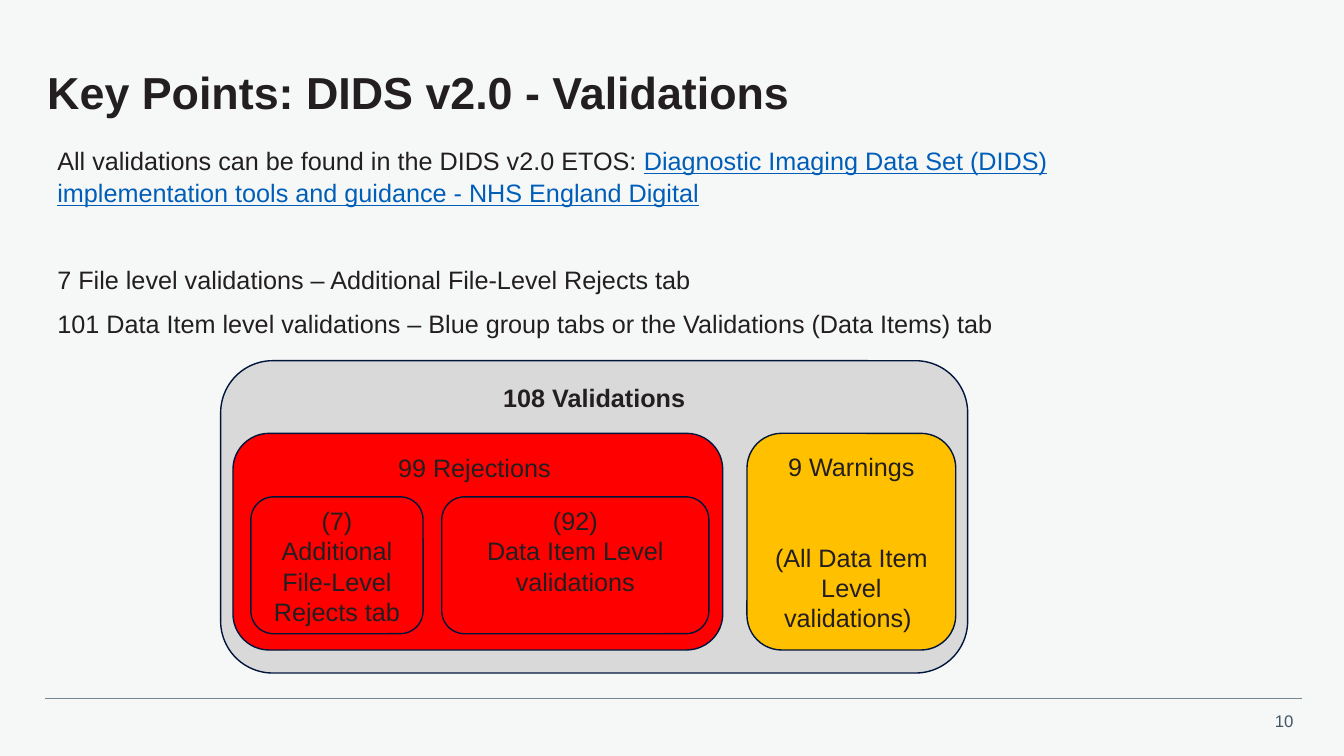
from lxml import etree
from pptx import Presentation
from pptx.dml.color import RGBColor
from pptx.enum.shapes import MSO_CONNECTOR, MSO_SHAPE
from pptx.enum.text import MSO_ANCHOR, MSO_AUTO_SIZE, PP_ALIGN
from pptx.oxml.ns import qn
from pptx.util import Cm, Pt

LEFT, CENTER, RIGHT = PP_ALIGN.LEFT, PP_ALIGN.CENTER, PP_ALIGN.RIGHT
TOP, MIDDLE = MSO_ANCHOR.TOP, MSO_ANCHOR.MIDDLE
NO_AUTOFIT = MSO_AUTO_SIZE.NONE
ROUNDED = MSO_SHAPE.ROUNDED_RECTANGLE
STRAIGHT = MSO_CONNECTOR.STRAIGHT

PAPER = RGBColor(0xF6, 0xF8, 0xF8)
INK = RGBColor(0x23, 0x1F, 0x20)
LINK_BLUE = RGBColor(0x00, 0x5E, 0xB8)
NAVY = RGBColor(0x00, 0x15, 0x3B)
GREY = RGBColor(0xD9, 0xD9, 0xD9)
RED = RGBColor(0xFF, 0x00, 0x00)
AMBER = RGBColor(0xFF, 0xC0, 0x00)
RULE_GREY = RGBColor(0x76, 0x86, 0x92)
NUMBER_GREY = RGBColor(0x42, 0x55, 0x63)

FONT = "Arial"
BLANK_LINES = Pt(43)


def add_run(para, text, size=18, color=INK, bold=False, underline=False):
    span = para.add_run()
    span.text = text
    span.font.name = FONT
    span.font.size = Pt(size)
    span.font.color.rgb = color
    span.font.bold = bold
    span.font.underline = underline


def place(shape, left, top, width, height):
    shape.left, shape.top = Cm(left), Cm(top)
    shape.width, shape.height = Cm(width), Cm(height)


def next_paragraph(frame, index):
    return frame.add_paragraph() if index else frame.paragraphs[0]


def remove_bullet(para):
    properties = para._p.get_or_add_pPr()
    properties.set("marL", "0")
    properties.set("indent", "0")
    etree.SubElement(properties, qn("a:buNone"))


def fill_title(title, text):
    place(title, 1.19, 1.19, 31.67, 2.41)
    frame = title.text_frame
    frame.auto_size = NO_AUTOFIT
    frame.vertical_anchor = MIDDLE
    frame.margin_left = frame.margin_right = 0
    frame.margin_top = frame.margin_bottom = 0
    para = frame.paragraphs[0]
    para.alignment = LEFT
    para.line_spacing = 0.9
    para.space_after = Pt(6)
    add_run(para, text, size=32, bold=True)


def fill_body(body, paragraphs):
    """Each paragraph is its space before and a list of (text, is_link)."""
    place(body, 1.19, 3.48, 28.88, 5.16)
    frame = body.text_frame
    frame.auto_size = NO_AUTOFIT
    frame.vertical_anchor = TOP
    for index, (space_before, parts) in enumerate(paragraphs):
        para = next_paragraph(frame, index)
        remove_bullet(para)
        para.alignment = LEFT
        para.line_spacing = 1.07
        para.space_before = Pt(space_before)
        para.space_after = Pt(8)
        for text, is_link in parts:
            add_run(para, text, color=LINK_BLUE if is_link else INK, underline=is_link)


def add_group_box(slide, bounds, fill, lines, top_margin, bold=False, gap=0):
    """Rounded box with centred lines from the top, `gap` apart."""
    box = slide.shapes.add_shape(ROUNDED, *map(Cm, bounds))
    box.shadow.inherit = False
    box.fill.solid()
    box.fill.fore_color.rgb = fill
    box.line.color.rgb = NAVY
    box.line.width = Pt(1)
    frame = box.text_frame
    frame.word_wrap = True
    frame.vertical_anchor = TOP
    frame.margin_top, frame.margin_bottom = Cm(top_margin), 0
    for index, text in enumerate(lines):
        para = next_paragraph(frame, index)
        para.alignment = CENTER
        if index:
            para.space_before = gap
        add_run(para, text, bold=bold)


def add_footer(slide, number):
    rule = slide.shapes.add_connector(STRAIGHT, Cm(1.14), Cm(17.6), Cm(32.79), Cm(17.6))
    rule.line.color.rgb = RULE_GREY
    rule.line.width = Pt(0.5)
    etree.SubElement(rule._element.spPr, qn("a:effectLst"))
    box = slide.shapes.add_textbox(Cm(31.8), Cm(17.78), Cm(1.04), Cm(0.76))
    para = box.text_frame.paragraphs[0]
    para.alignment = RIGHT
    add_run(para, number, size=12, color=NUMBER_GREY)


def main():
    deck = Presentation()
    deck.slide_width, deck.slide_height = Cm(33.86), Cm(19.05)
    page = deck.slides.add_slide(deck.slide_layouts[1])
    page.background.fill.solid()
    page.background.fill.fore_color.rgb = PAPER

    add_footer(page, "10")
    fill_title(page.shapes.title, "Key Points: DIDS v2.0 - Validations")
    fill_body(page.placeholders[1], [
        (0, [("All validations can be found in the DIDS v2.0 ETOS: ", False),
             ("Diagnostic Imaging Data Set (DIDS) implementation tools and guidance"
              " - NHS England Digital", True)]),
        (31, [("7 File level validations – Additional File-Level Rejects tab", False)]),
        (0, [("101 Data Item level validations – Blue group tabs or the"
              " Validations (Data Items) tab", False)]),
    ])

    add_group_box(page, (5.56, 9.09, 18.82, 7.87), GREY, ["108 Validations"], 0.15, bold=True)
    add_group_box(page, (5.87, 10.92, 12.34, 5.46), RED, ["99 Rejections "], 0.2)
    add_group_box(page, (18.82, 10.92, 5.26, 5.46), AMBER,
                  ["9 Warnings", "(All Data Item Level validations) "], 0.2, gap=BLANK_LINES)
    add_group_box(page, (6.32, 12.52, 4.34, 3.45), RED,
                  ["(7) Additional File-Level Rejects tab"], 0.05)
    add_group_box(page, (11.13, 12.52, 6.73, 3.45), RED,
                  ["(92)", "Data Item Level validations"], 0.05)

    deck.save("out.pptx")


if __name__ == "__main__":
    main()
